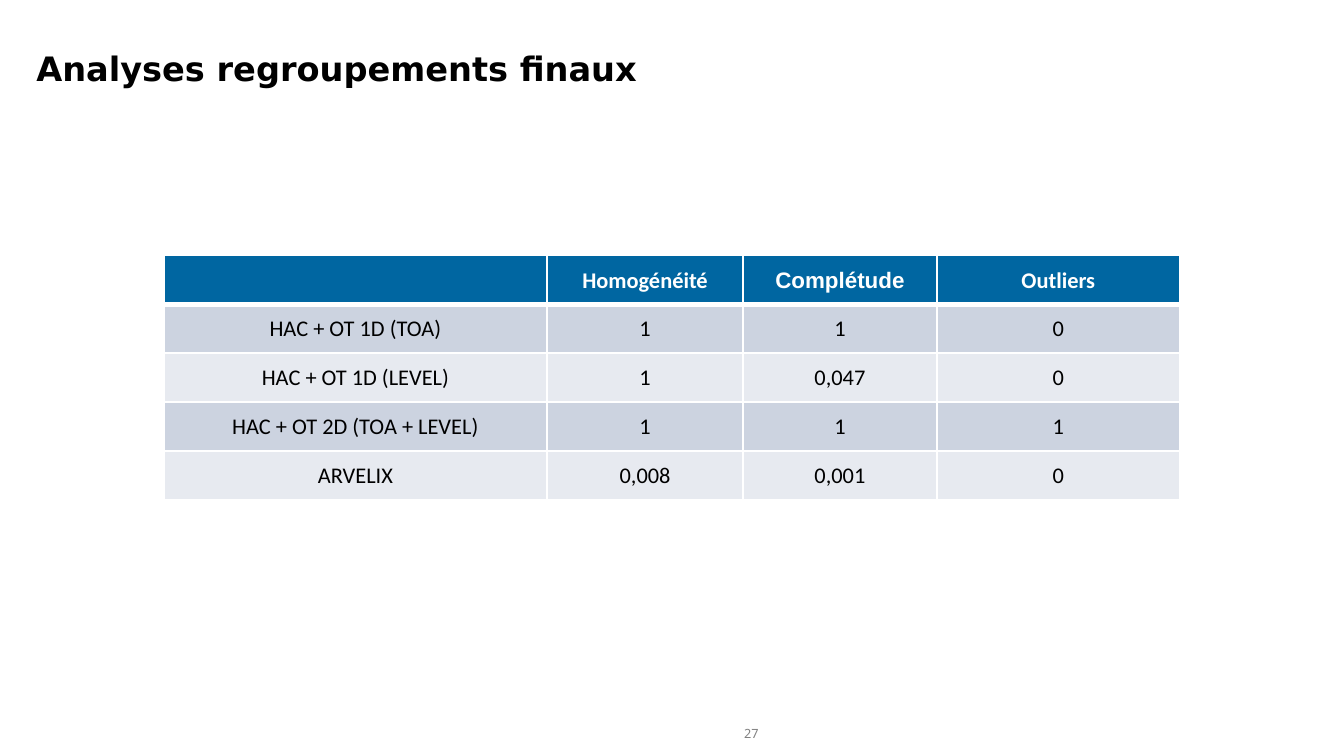
import pptx
import pptx.dml.color
import pptx.enum.text
import pptx.util
from lxml import etree
from pptx.oxml.ns import qn

Inches = pptx.util.Inches
Pt = pptx.util.Pt
ALIGN = pptx.enum.text.PP_ALIGN
ANCHOR = pptx.enum.text.MSO_ANCHOR


def color(value):
    return pptx.dml.color.RGBColor.from_string(value)


class SlideBuilder:
    header_fill = "0066A1"
    band_fills = ("CCD3E0", "E7EAF0")
    border = "FFFFFF"

    def __init__(self, deck):
        self.page = deck.slides.add_slide(deck.slide_layouts[5])

    def format(self, para, font, size, text_color, bold=False, align=ALIGN.CENTER):
        para.alignment = align
        para.font.name = font
        para.font.size = Pt(size)
        para.font.bold = bold
        para.font.color.rgb = color(text_color)

    def title(self, text, left, top, width, height):
        title = self.page.shapes.title
        title.left, title.top = Inches(left), Inches(top)
        title.width, title.height = Inches(width), Inches(height)
        frame = title.text_frame
        frame.text = text
        frame.word_wrap = True
        frame.auto_size = pptx.enum.text.MSO_AUTO_SIZE.NONE
        frame.vertical_anchor = ANCHOR.TOP
        self.format(frame.paragraphs[0], "DejaVu Sans", 18, "000000", True, ALIGN.LEFT)

    def page_number(self, text, left, top, width, height):
        box = self.page.shapes.add_textbox(
            Inches(left), Inches(top), Inches(width), Inches(height))
        frame = box.text_frame
        frame.word_wrap = True
        frame.vertical_anchor = ANCHOR.MIDDLE
        frame.margin_left = frame.margin_right = Inches(0.08)
        frame.margin_top = frame.margin_bottom = Inches(0.04)
        frame.text = text
        self.format(frame.paragraphs[0], "Noto Sans", 6.8, "818181")

    def borders(self, cell, top, bottom):
        properties = cell._tc.get_or_add_tcPr()
        for side, width in (("L", 1), ("R", 1), ("T", top), ("B", bottom)):
            line = etree.SubElement(properties, qn(f"a:ln{side}"), w=str(Pt(width)))
            fill = etree.SubElement(line, qn("a:solidFill"))
            etree.SubElement(fill, qn("a:srgbClr"), val=self.border)

    def cell(self, cell, text, row, font):
        header = row == 0
        self.borders(cell, 3 if row == 1 else 1, 3 if header else 1)
        cell.fill.solid()
        fill = self.header_fill if header else self.band_fills[(row - 1) % 2]
        cell.fill.fore_color.rgb = color(fill)
        cell.vertical_anchor = ANCHOR.MIDDLE
        cell.margin_left = cell.margin_right = cell.margin_top = Inches(0.01)
        cell.margin_bottom = 0
        cell.text = text
        text_color = "FFFFFF" if header else "000000"
        self.format(cell.text_frame.paragraphs[0], font, 12, text_color, header)

    def table(self, rows, left, top, widths, height):
        table = self.page.shapes.add_table(
            len(rows), len(widths), Inches(left), Inches(top),
            Inches(sum(widths)), Inches(height)).table
        for column, width in zip(table.columns, widths):
            column.width = Inches(width)
        for row, texts in enumerate(rows):
            for column, text in enumerate(texts):
                font = "Arial" if text == "Complétude" else "Calibri"
                self.cell(table.cell(row, column), text, row, font)


def main():
    deck = pptx.Presentation()
    deck.slide_width = Inches(10)
    deck.slide_height = deck.slide_width * 9 // 16
    slide = SlideBuilder(deck)
    slide.page_number("27", 5.25, 5.36, 0.68, 0.2)
    slide.title("Analyses regroupements finaux", 0.17, 0.31, 6.33, 0.62)
    results = [
        ("", "Homogénéité", "Complétude", "Outliers"),
        ("HAC + OT 1D (TOA)", "1", "1", "0"),
        ("HAC + OT 1D (LEVEL)", "1", "0,047", "0"),
        ("HAC + OT 2D (TOA + LEVEL)", "1", "1", "1"),
        ("ARVELIX", "0,008", "0,001", "0"),
    ]
    slide.table(results, 1.22, 1.9, (2.85, 1.46, 1.44, 1.81), 1.82)
    deck.save("out.pptx")


if __name__ == "__main__":
    main()
